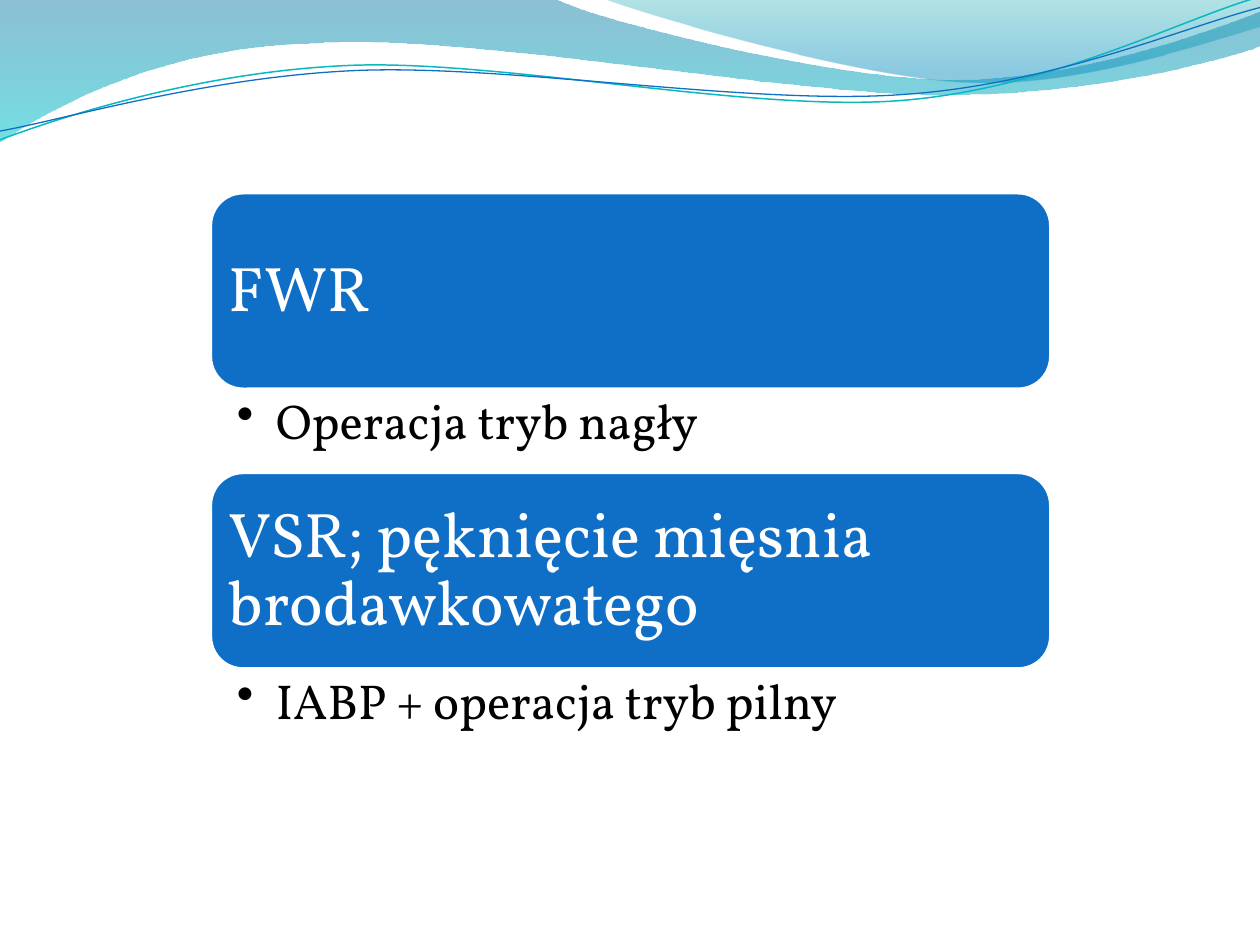
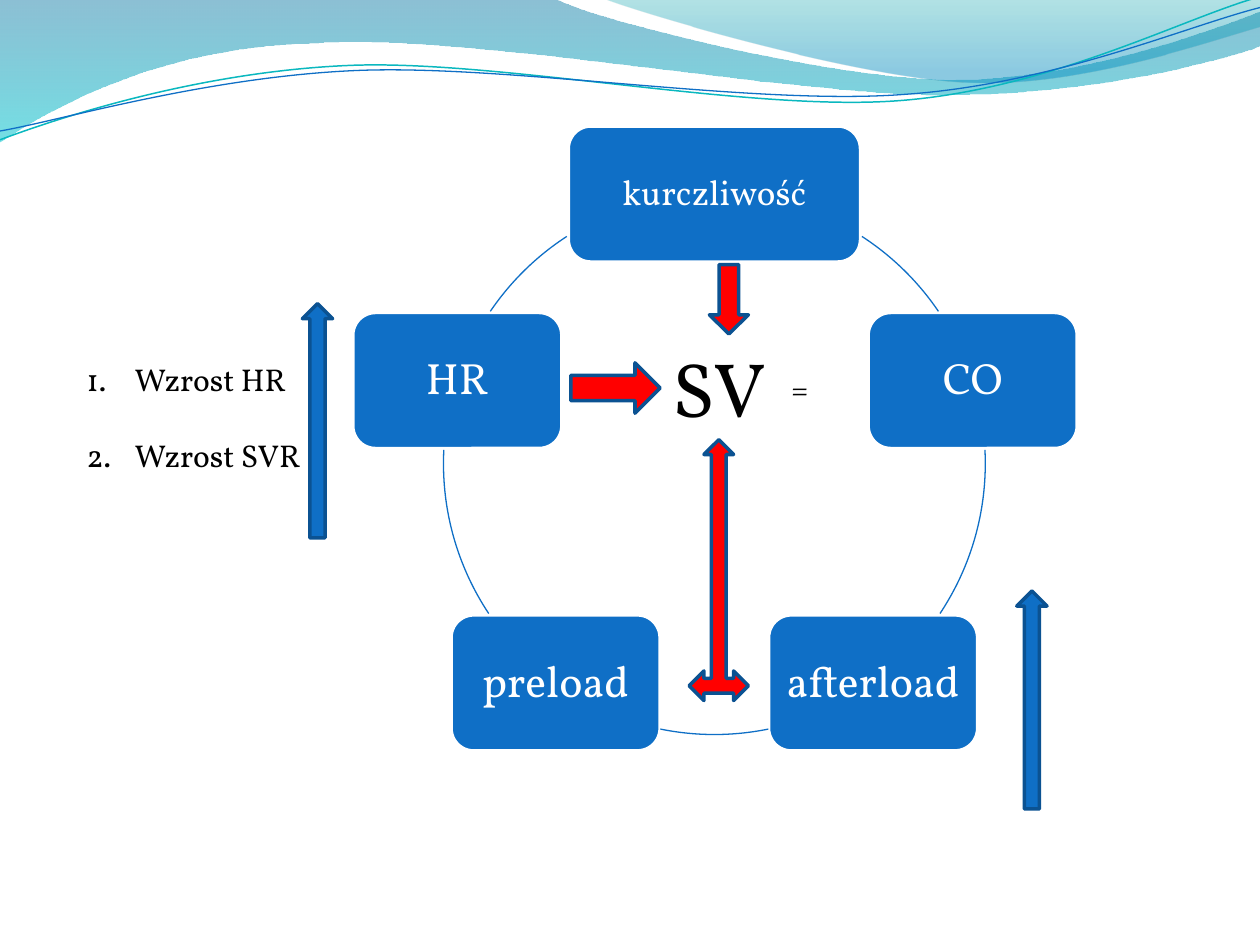
from lxml.etree import SubElement
from pptx import Presentation
from pptx.dml.color import RGBColor
from pptx.enum.shapes import MSO_SHAPE as SHAPE
from pptx.enum.text import MSO_ANCHOR as ANCHOR, PP_ALIGN as ALIGN
from pptx.oxml.ns import qn
from pptx.util import Pt

PX = 9144  # 100 px to the inch
FONT = "Vollkorn"
BLUE, NAVY, TEAL = "0F6FC6", "0B5292", "0AB8BF"
RED, WHITE, BLACK = "FF0000", "FFFFFF", "000000"

# Wave bands: start point, then cubic curves (6 numbers) or straight lines (2)
BANDS = [
    ([(0, 0), (440, -1), (476, 17, 664, 63, 758, 63), (853, 63, 958, 26, 1000, 9),
      (1001, 36), (983, 44, 870, 76, 746, 75), (622, 75, 382, 28, 257, 34),
      (129, 36, 46, 83, -1, 113)],
     [(0, "0074A1", 45), (1, "00C6CF", 55)]),
    ([(479, -1), (509, 11, 682, 62, 769, 65), (856, 69, 961, 32, 1000, 21),
      (1000, 0)],
     [(0, "00A1A9", 30), (0.8, "008BBF", 45)]),
]
WAVE_LINES = [
    ([(0, 111), (48, 93, 158, 57, 277, 52), (395, 47, 593, 89, 713, 80),
      (833, 71, 938, 15, 998, -2)], TEAL, 0.85),
    ([(0, 104), (47, 96, 164, 61, 283, 56), (403, 51, 597, 84, 717, 75),
      (836, 67, 941, 21, 1000, 6)], BLUE, 0.75),
]

# Operation timing for each complication
COMPLICATIONS = [
    ("FWR", "Operacja tryb nagły"),
    ("VSR; pęknięcie mięsnia brodawkowatego", "IABP + operacja tryb pilny"),
]

# Cycle of factors: label, left, top, width, text size
FACTORS = [
    ("kurczliwość", 451, 100, 232, 20),
    ("CO", 689, 248, 166, 25),
    ("afterload", 610, 488, 166, 25),
    ("preload", 358, 488, 166, 25),
    ("HR", 280, 248, 166, 25),
]
CYCLE_ARCS = [(303, 325.8), (357.1, 33.6), (78.5, 101.5), (146.4, 182.9), (214.2, 237)]

ARROWS = [
    (SHAPE.RIGHT_ARROW, (453, 288, 71, 40), RED, ()),
    (SHAPE.DOWN_ARROW, (563, 210, 31, 55), RED, (0.5, 0.488)),
    (SHAPE.LEFT_RIGHT_UP_ARROW, (547, 349, 47, 207), RED, ()),
    (SHAPE.UP_ARROW, (240, 241, 24, 186), BLUE, ()),
    (SHAPE.UP_ARROW, (807, 469, 24, 173), BLUE, ()),
]


def rgb(color):
    return RGBColor.from_string(color)


def emu(*lengths):
    return [round(length * PX) for length in lengths]


def apply(target, values):
    for name, value in values.items():
        setattr(target, name, value)


def paint(shape, fill=None, line=None, width=1):
    """Set plain fill and outline; None means none."""
    shape.shadow.inherit = False
    if fill:
        shape.fill.solid()
        shape.fill.fore_color.rgb = rgb(fill)
    else:
        shape.fill.background()
    if line:
        shape.line.color.rgb = rgb(line)
        shape.line.width = Pt(width)
    else:
        shape.line.fill.background()


def paint_gradient(shape, stops):
    """Fill from top to bottom with half-transparent stops."""
    paint(shape)
    shape.fill.gradient()
    shape.fill.gradient_angle = 270
    for stop, (position, color, _) in zip(shape.fill.gradient_stops, stops):
        stop.position = position
        stop.color.rgb = rgb(color)
    colors = shape._element.spPr.iter(qn("a:srgbClr"))
    for node, (_, _, opacity) in zip(colors, stops):
        SubElement(node, qn("a:alpha"), val=str(opacity * 1000))


def write(frame, lines, size, color, inset=(10, 5, 10, 5), bullet=None, hang=0,
          frame_format=None, line_format=None):
    """Write lines into a text frame, with hanging bullets if given."""
    left, top, right, bottom = emu(*inset)
    apply(frame, {"margin_left": left, "margin_top": top, "margin_right": right,
                  "margin_bottom": bottom, "word_wrap": True, **(frame_format or {})})
    for index, text in enumerate(lines):
        paragraph = frame.add_paragraph() if index else frame.paragraphs[0]
        apply(paragraph, line_format or {})
        if index == 0:
            paragraph.space_before = Pt(0)
        run = paragraph.add_run()
        run.text = text
        apply(run.font, {"name": FONT, "size": Pt(size)})
        run.font.color.rgb = rgb(color)
        if bullet:
            tag, attributes = bullet
            properties = paragraph._p.get_or_add_pPr()
            properties.set("marL", str(hang * PX))
            properties.set("indent", str(-hang * PX))
            SubElement(properties, qn(tag), attributes)


def add_label(slide, box, lines, size, **options):
    label = slide.shapes.add_textbox(*emu(*box))
    write(label.text_frame, lines, size, BLACK, **options)


def add_card(slide, box, text, size, inset, align):
    card = slide.shapes.add_shape(SHAPE.ROUNDED_RECTANGLE, *emu(*box))
    paint(card, BLUE, WHITE, 2)
    write(card.text_frame, [text], size, WHITE, inset=(inset,) * 4,
          frame_format={"vertical_anchor": ANCHOR.MIDDLE},
          line_format={"alignment": align, "line_spacing": 0.9})


def add_arrow(slide, kind, box, fill, adjustments):
    arrow = slide.shapes.add_shape(kind, *emu(*box))
    paint(arrow, fill, NAVY, 2)
    for index, value in enumerate(adjustments):
        arrow.adjustments[index] = value


def add_cycle_arc(slide, start, end):
    arc = slide.shapes.add_shape(SHAPE.ARC, *emu(352, 153, 430, 430))
    paint(arc, line=BLUE, width=0.75)
    for index, degrees in enumerate((start, end)):
        arc.adjustments[index] = degrees * 0.6


def add_outline(slide, outline, close):
    """Draw a freeform, joining each three points of a curve into one cubic."""
    points = [emu(*segment[i:i + 2]) for segment in outline
              for i in range(0, len(segment), 2)]
    builder = slide.shapes.build_freeform(*points[0])
    builder.add_line_segments(points[1:], close=close)
    shape = builder.convert_to_shape()
    lines = iter(list(shape._element.iter(qn("a:lnTo"))))
    for segment in outline[1:]:
        first = next(lines)
        if len(segment) == 6:
            first.tag = qn("a:cubicBezTo")
            for _ in range(2):
                line = next(lines)
                first.append(line[0])
                line.getparent().remove(line)
    return shape


def add_wave_header(slide, layout):
    """Draw the waves and hand them to the layout that both slides share."""
    waves = []
    for outline, stops in BANDS:
        band = add_outline(slide, outline, True)
        paint_gradient(band, stops)
        waves.append(band)
    for outline, color, width in WAVE_LINES:
        wave_line = add_outline(slide, outline, False)
        paint(wave_line, line=color, width=width)
        waves.append(wave_line)
    for wave in waves:
        layout.shapes._spTree.append(wave._element)


def build_timing(slide):
    for index, (complication, treatment) in enumerate(COMPLICATIONS):
        top = 153 + index * 222
        add_card(slide, (167, top, 667, 156), complication, 36, 7, ALIGN.LEFT)
        add_label(slide, (167, top + 157, 667, 65), [treatment], 28,
                  inset=(21, 0, 28, 5), bullet=("a:buChar", {"char": "•"}), hang=31)


def build_cycle(slide):
    for factor, left, top, width, size in FACTORS:
        add_card(slide, (left, top, width, 108), factor, size, 5, ALIGN.CENTER)
    for start, end in CYCLE_ARCS:
        add_cycle_arc(slide, start, end)

    # Stroke volume and what changes it
    add_label(slide, (524, 265, 110, 84), ["SV"], 44)
    add_label(slide, (618, 288, 47, 40), ["="], 18)
    add_label(slide, (59, 281, 200, 101), ["Wzrost HR", "Wzrost SVR"], 18,
              bullet=("a:buAutoNum", {"type": "arabicPeriod"}), hang=38,
              line_format={"space_before": Pt(21.6)})
    for arrow in ARROWS:
        add_arrow(slide, *arrow)


def main():
    deck = Presentation()
    deck.slide_width, deck.slide_height = emu(1000, 750)
    layout = deck.slide_layouts[6]
    timing, cycle = [deck.slides.add_slide(layout) for _ in range(2)]
    add_wave_header(timing, layout)
    build_timing(timing)
    build_cycle(cycle)
    deck.save("out.pptx")


if __name__ == "__main__":
    main()
